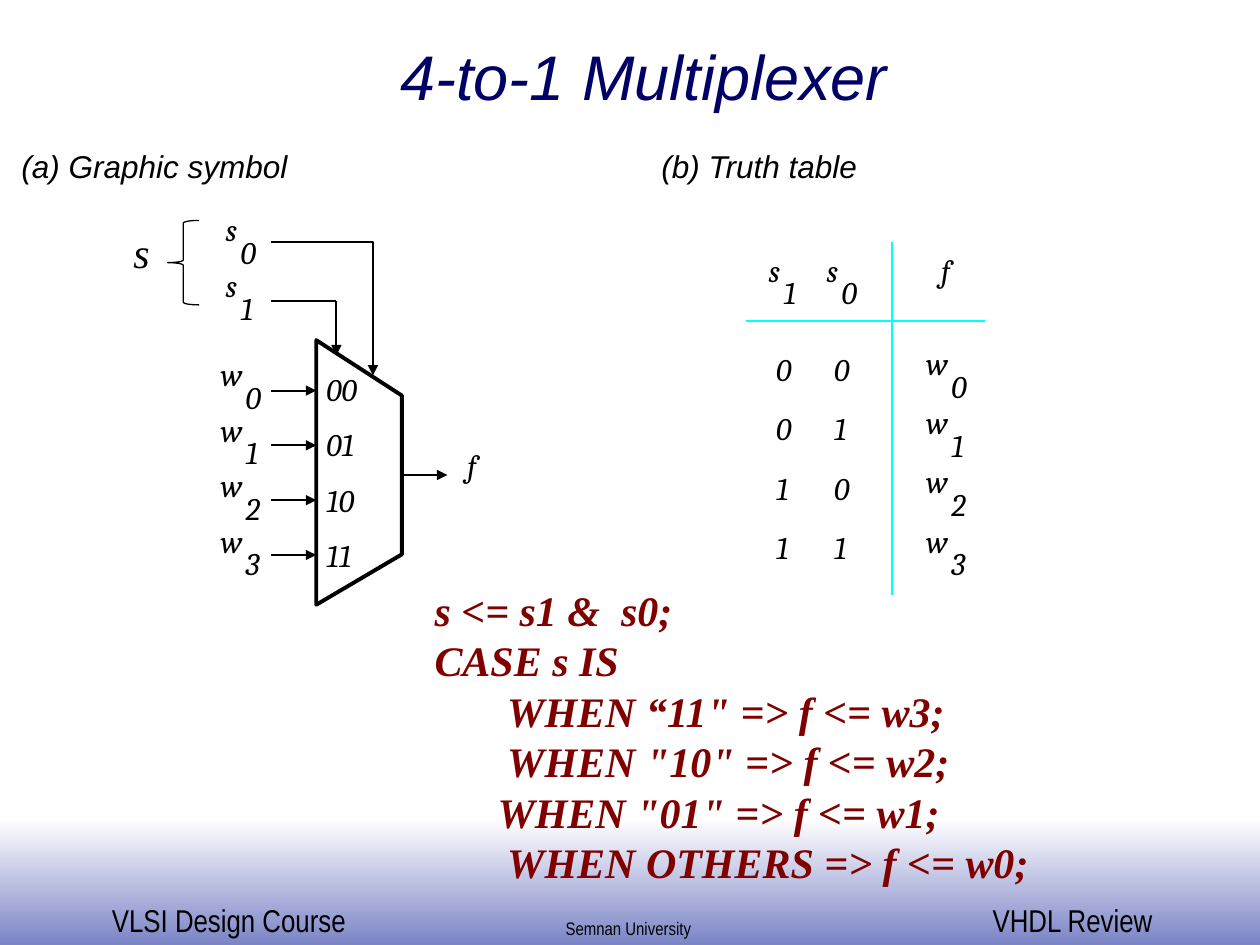
from lxml import etree
from pptx import Presentation
from pptx.dml.color import RGBColor
from pptx.enum.shapes import MSO_CONNECTOR, MSO_SHAPE
from pptx.enum.text import MSO_AUTO_SIZE
from pptx.oxml.ns import qn
from pptx.util import Inches, Pt

STRAIGHT = MSO_CONNECTOR.STRAIGHT
RECTANGLE = MSO_SHAPE.RECTANGLE
LEFT_BRACE = MSO_SHAPE.LEFT_BRACE
FIT_SHAPE = MSO_AUTO_SIZE.SHAPE_TO_FIT_TEXT

BLACK = RGBColor(0x00, 0x00, 0x00)
WHITE = RGBColor(0xFF, 0xFF, 0xFF)
NAVY = RGBColor(0x00, 0x00, 0x66)
MAROON = RGBColor(0x80, 0x00, 0x00)
CYAN = RGBColor(0x00, 0xFF, 0xFF)
PERIWINKLE = RGBColor(0x7B, 0x84, 0xC6)

SUB_DROP = 0.18

prs = Presentation()
prs.slide_width, prs.slide_height = Inches(10), Inches(7.5)
s = prs.slides.add_slide(prs.slide_layouts[6])


def add_text(lines, x, y, w, h=0.3, font="Cambria", size=18, color=BLACK,
             italic=True, bold=False, inset=0):
    """Add an unwrapped text box, one paragraph per line, and return its frame."""
    tf = s.shapes.add_textbox(Inches(x), Inches(y), Inches(w), Inches(h)).text_frame
    tf.word_wrap = False
    tf.auto_size = FIT_SHAPE
    tf.margin_left = tf.margin_right = Inches(inset)
    tf.margin_top = tf.margin_bottom = Inches(inset / 2)
    for i, line in enumerate(lines):
        p = tf.paragraphs[0] if i == 0 else tf.add_paragraph()
        p.add_run().text = line
        p.font.name, p.font.size, p.font.color.rgb = font, Pt(size), color
        p.font.italic, p.font.bold = italic, bold
    return tf


def style_line(sp, color=BLACK, width=1.25, arrow=False):
    """Colour the line, drop the shadow and optionally put an arrow at its end."""
    sp.line.color.rgb = color
    sp.line.width = Pt(width)
    sp_pr = sp._element.spPr
    if arrow:
        etree.SubElement(sp_pr.find(qn("a:ln")), qn("a:tailEnd"), type="triangle")
    etree.SubElement(sp_pr, qn("a:effectLst"))


# Footer band and footer texts
band = s.shapes.add_shape(RECTANGLE, 0, Inches(6.5), Inches(10), Inches(1))
band.shadow.inherit = False
band.line.fill.background()
band.fill.gradient()
band.fill.gradient_angle = 270
for stop, color, position in zip(band.fill.gradient_stops, (WHITE, PERIWINKLE), (0, 1)):
    stop.color.rgb = color
    stop.position = position

footer = dict(font="Arial Narrow", italic=False, inset=0.1)
add_text(["VLSI Design Course"], 0.79, 7.1, 2.06, 0.4, **footer)
add_text(["VHDL Review"], 7.78, 7.1, 1.48, 0.4, **footer)
tf = add_text(["Semnan University"], 4.39, 7.2, 1.35, **footer)
tf.paragraphs[0].runs[0]._r.get_or_add_rPr().set("baseline", "30000")

# Title and captions
tf = add_text(["4-to-1 Multiplexer"], 2.08, 0.25, 5.06, 0.7, font="Arial", size=36,
              color=NAVY, inset=0.1)
p_pr = tf.paragraphs[0]._p.get_or_add_pPr()
p_pr.set("marL", str(Inches(1.25)))
p_pr.set("indent", str(Inches(-0.25)))
add_text(["(a) Graphic symbol"], 0.17, 1.17, 2.18, font="Arial")
add_text(["(b) Truth table"], 5.25, 1.17, 1.64, font="Arial")

# Multiplexer body and the routed select wires
paths = [
    ([(3.19, 4.4), (3.19, 3.14), (2.51, 2.7), (2.51, 4.8)], True),
    ([(2.15, 1.92), (2.96, 1.92), (2.96, 2.98)], False),
]
for points, closed in paths:
    corners = [(Inches(x), Inches(y)) for x, y in points]
    builder = s.shapes.build_freeform(*corners[0])
    builder.add_line_segments(corners[1:], close=closed)
    sp = builder.convert_to_shape()
    if closed:
        sp.fill.solid()
        sp.fill.fore_color.rgb = WHITE
    else:
        sp.fill.background()
    style_line(sp, width=2.25 if closed else 1.25, arrow=not closed)

# Straight wires and table rules: start, end, colour, arrow
wires = [((2.15, 3.1 + 0.435 * i), (2.51, 3.1 + 0.435 * i), BLACK, True) for i in range(4)]
wires += [
    ((3.2, 3.77), (3.55, 3.77), BLACK, True),
    ((2.15, 2.39), (2.67, 2.39), BLACK, False),
    ((2.67, 2.39), (2.67, 2.82), BLACK, True),
    ((5.92, 2.55), (7.82, 2.55), CYAN, False),
    ((7.08, 1.92), (7.08, 4.72), CYAN, False),
]
for start, end, color, arrow in wires:
    line = s.shapes.add_connector(STRAIGHT, *(Inches(v) for v in start + end))
    style_line(line, color, arrow=arrow)

# Subscripted signal names: letter, index, left, top
signals = [("s", 0, 1.79, 1.67), ("s", 1, 1.79, 2.11),
           ("s", 1, 6.1, 1.99), ("s", 0, 6.56, 1.99)]
for i in range(4):
    signals += [("w", i, 1.75, 2.82 + 0.44 * i), ("w", i, 7.35, 2.73 + 0.47 * i)]
for letter, index, x, y in signals:
    add_text([letter], x, y, 0.25 if letter == "w" else 0.19)
    add_text([str(index)], x + (0.2 if letter == "w" else 0.12), y + SUB_DROP, 0.21)

# Output names, input codes and truth table bits
add_text(["f"], 3.71, 3.54, 0.14)
add_text(["f"], 7.47, 1.99, 0.14)
for i, code in enumerate(("00", "01", "10", "11")):
    add_text([code], 2.59, 2.94 + 0.437 * i, 0.28)
    for x, bit in zip((6.16, 6.62), code):
        add_text([bit], x, 2.78 + 0.47 * i, 0.21)

# VHDL code
add_text([
    "s <= s1 &  s0;",
    "CASE s IS",
    "\t WHEN “11\" => f <= w3;",
    "\t WHEN \"10\" => f <= w2;",
    "\tWHEN \"01\" => f <= w1;",
    "\t WHEN OTHERS => f <= w0;",
], 3.35, 4.59, 5.58, 2.52, font="Times New Roman", size=24, color=MAROON,
    bold=True, inset=0.1)

# Select bus
brace = s.shapes.add_shape(LEFT_BRACE, Inches(1.33), Inches(1.75), Inches(0.25), Inches(0.67))
brace.fill.background()
style_line(brace, width=0.75)
add_text(["s"], 0.96, 1.75, 0.45, 0.51, font="Times New Roman", size=24, inset=0.1)

prs.save("out.pptx")
